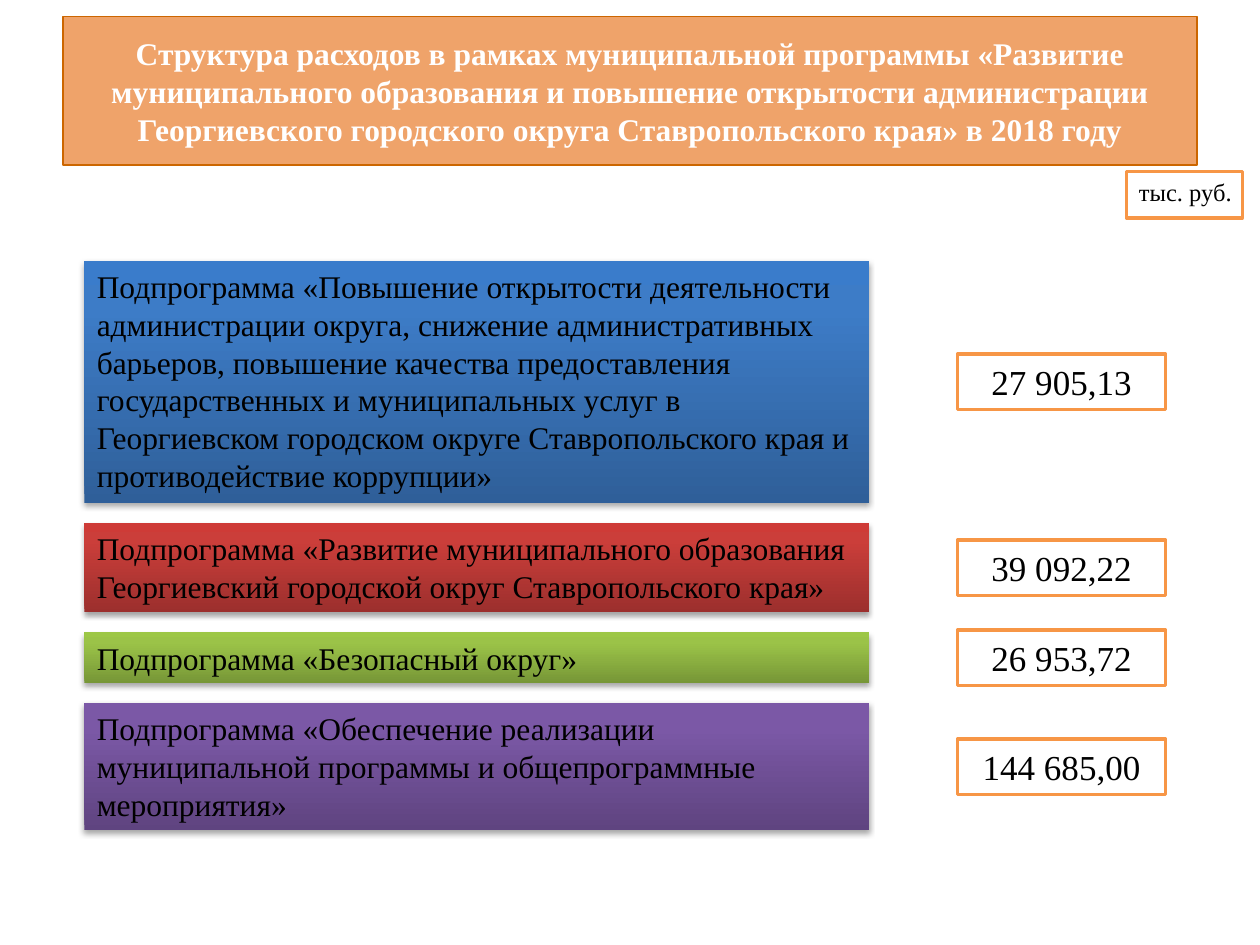
from copy import deepcopy

from lxml import etree
from pptx import Presentation
from pptx.dml.color import RGBColor
from pptx.enum.shapes import MSO_SHAPE
from pptx.enum.text import MSO_ANCHOR, MSO_AUTO_SIZE, PP_ALIGN
from pptx.oxml.ns import qn
from pptx.util import Inches, Pt

RECTANGLE = MSO_SHAPE.RECTANGLE
MIDDLE, TOP = MSO_ANCHOR.MIDDLE, MSO_ANCHOR.TOP
LEFT, CENTER = PP_ALIGN.LEFT, PP_ALIGN.CENTER
NO_AUTO_SIZE = MSO_AUTO_SIZE.NONE

FONT = "Times New Roman"
WHITE = RGBColor(0xFF, 0xFF, 0xFF)
BLACK = RGBColor(0x00, 0x00, 0x00)
TITLE_FILL = RGBColor(0xE9, 0x7C, 0x2B)
TITLE_LINE = RGBColor(0xCC, 0x66, 0x00)
ORANGE = RGBColor(0xF7, 0x96, 0x46)
BLUES = (RGBColor(0x2F, 0x5F, 0x99), RGBColor(0x3D, 0x7C, 0xC7), RGBColor(0x3A, 0x7C, 0xCB))
REDS = (RGBColor(0x9C, 0x2F, 0x2D), RGBColor(0xCB, 0x3E, 0x3A), RGBColor(0xCE, 0x3B, 0x37))
GREENS = (RGBColor(0x77, 0x97, 0x37), RGBColor(0x9B, 0xC3, 0x48), RGBColor(0x9D, 0xC7, 0x46))
PURPLES = (RGBColor(0x5F, 0x44, 0x80), RGBColor(0x7B, 0x58, 0xA6), RGBColor(0x7C, 0x57, 0xA8))
GRADIENT_POSITIONS = (0, 0.8, 1)

TITLE = (
    "Структура расходов в рамках муниципальной программы «Развитие муниципального "
    "образования и повышение открытости администрации Георгиевского городского округа "
    "Ставропольского края» в 2018 году"
)
PROGRAMMES = [
    (
        "Подпрограмма «Повышение открытости деятельности администрации округа, снижение "
        "административных барьеров, повышение качества предоставления государственных и "
        "муниципальных услуг в Георгиевском городском округе Ставропольского края и "
        "противодействие коррупции»",
        "27 905,13", 1.92, BLUES,
    ),
    (
        "Подпрограмма «Развитие муниципального образования Георгиевский городской округ "
        "Ставропольского края»",
        "39 092,22", 0.71, REDS,
    ),
    ("Подпрограмма «Безопасный округ»", "26 953,72", 0.4, GREENS),
    (
        "Подпрограмма «Обеспечение реализации муниципальной программы и "
        "общепрограммные мероприятия»",
        "144 685,00", 1.01, PURPLES,
    ),
]
ROWS_TOP = 2.07
ROW_GAP = 0.16
VALUE_OFFSET = 6.93
VALUE_WIDTH, VALUE_HEIGHT = 1.65, 0.44


def write_text(shape, text, size, color=BLACK, alignment=LEFT, anchor=TOP, bold=False, wrap=True):
    frame = shape.text_frame
    frame.text = text
    frame.word_wrap = wrap
    frame.auto_size = NO_AUTO_SIZE
    frame.vertical_anchor = anchor
    paragraph = frame.paragraphs[0]
    paragraph.alignment = alignment
    font = paragraph.font
    font.name, font.size, font.bold = FONT, Pt(size), bold
    font.color.rgb = color


def paint(shape, fill, line, width):
    shape.fill.solid()
    shape.fill.fore_color.rgb = fill
    shape.line.color.rgb = line
    shape.line.width = Pt(width)


def paint_gradient(shape, colors):
    fill = shape.fill
    fill.gradient()
    fill.gradient_angle = 90
    stop_list = shape.element.spPr.find(f".//{qn('a:gsLst')}")
    stop_list.append(deepcopy(stop_list[-1]))
    for stop, position, color in zip(fill.gradient_stops, GRADIENT_POSITIONS, colors):
        stop.position = position
        stop.color.rgb = color


def add_shadow(shape):
    shape.shadow.inherit = False
    effects = shape.element.spPr.find(qn("a:effectLst"))
    shadow = etree.SubElement(
        effects, qn("a:outerShdw"), blurRad=str(Pt(3.1)), dist=str(Pt(1.8)),
        dir="5400000", rotWithShape="0",
    )
    color = etree.SubElement(shadow, qn("a:srgbClr"), val=str(BLACK))
    etree.SubElement(color, qn("a:alpha"), val="35000")


def set_title(slide, left, top, width, height):
    title = slide.shapes.title
    title.left, title.top = Inches(left), Inches(top)
    title.width, title.height = Inches(width), Inches(height)
    paint(title, TITLE_FILL, TITLE_LINE, 0.75)
    color = title.element.spPr.find(f"{qn('a:solidFill')}/{qn('a:srgbClr')}")
    etree.SubElement(color, qn("a:alpha"), val="70000")
    write_text(title, TITLE, 18, WHITE, CENTER, MIDDLE, bold=True)


def add_framed_text(slide, text, size, left, top, width, height, alignment=LEFT, wrap=True):
    box = slide.shapes.add_textbox(Inches(left), Inches(top), Inches(width), Inches(height))
    paint(box, WHITE, ORANGE, 2)
    write_text(box, text, size, alignment=alignment, wrap=wrap)


def add_programme(slide, name, value, colors, left, top, width, height):
    bar = slide.shapes.add_shape(
        RECTANGLE, Inches(left), Inches(top), Inches(width), Inches(height)
    )
    paint_gradient(bar, colors)
    bar.line.fill.background()
    add_shadow(bar)
    write_text(bar, name, 18)
    value_top = top + (height - VALUE_HEIGHT) / 2
    add_framed_text(
        slide, value, 20, left + VALUE_OFFSET, value_top, VALUE_WIDTH, VALUE_HEIGHT, CENTER
    )


def main():
    presentation = Presentation()
    presentation.slide_width = Inches(10)
    presentation.slide_height = Inches(7.5)
    slide = presentation.slides.add_slide(presentation.slide_layouts[5])
    set_title(slide, 0.5, 0.13, 9, 1.18)
    add_framed_text(slide, "тыс. руб.", 14, 8.94, 1.36, 0.92, 0.37, wrap=False)
    top = ROWS_TOP
    for name, value, height, colors in PROGRAMMES:
        add_programme(slide, name, value, colors, 0.67, top, 6.23, height)
        top += height + ROW_GAP
    presentation.save("out.pptx")


if __name__ == "__main__":
    main()
